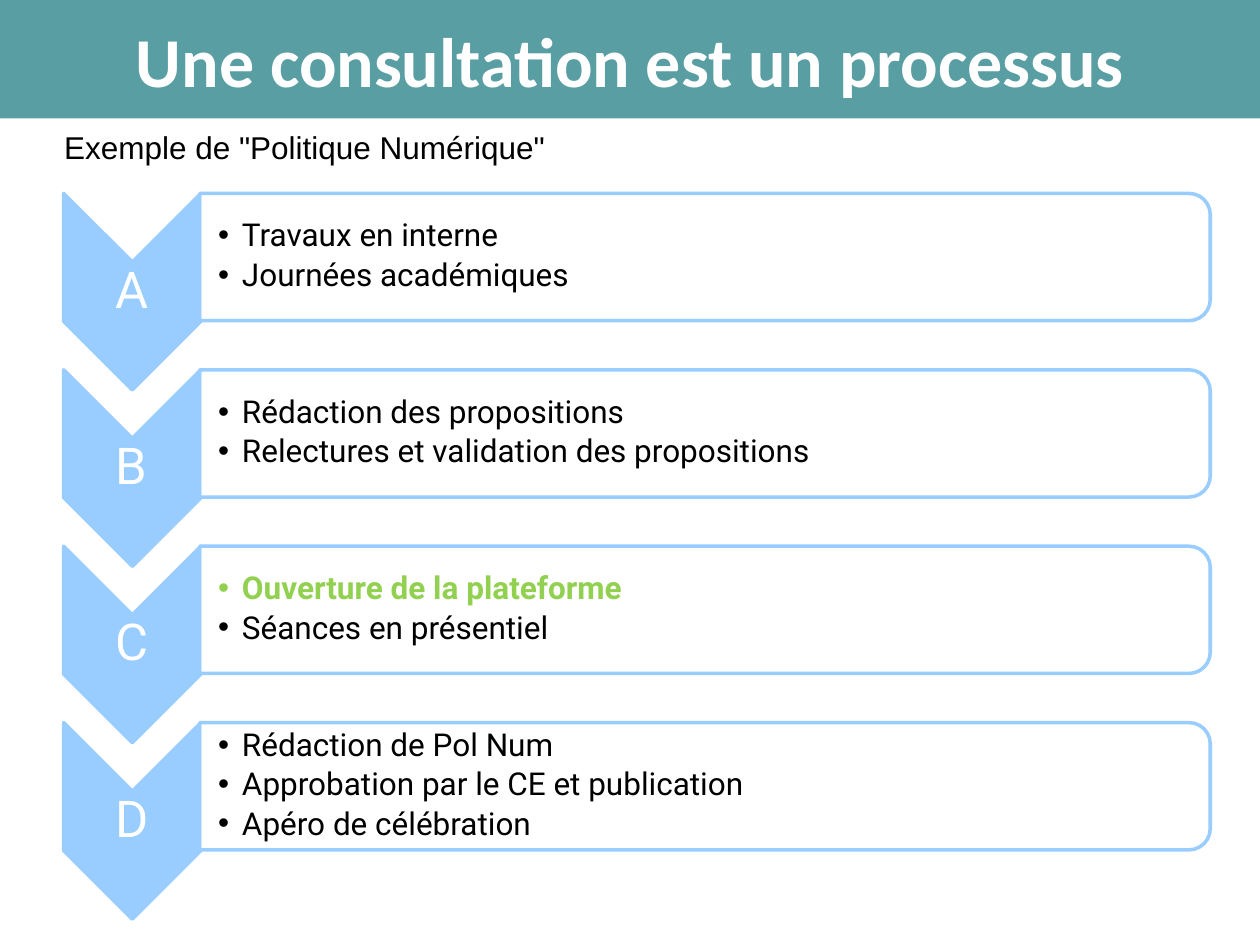
"""Build the slide showing the four stages of a consultation."""
from dataclasses import dataclass

from lxml import etree
from pptx import Presentation
from pptx.dml.color import RGBColor
from pptx.enum.shapes import MSO_SHAPE
from pptx.enum.text import MSO_ANCHOR, MSO_AUTO_SIZE, PP_ALIGN
from pptx.oxml.ns import qn
from pptx.util import Inches, Pt

CHEVRON = MSO_SHAPE.CHEVRON
CARD = MSO_SHAPE.ROUND_2_SAME_RECTANGLE
TOP, MIDDLE = MSO_ANCHOR.TOP, MSO_ANCHOR.MIDDLE
LEFT, CENTER = PP_ALIGN.LEFT, PP_ALIGN.CENTER
NO_AUTOFIT = MSO_AUTO_SIZE.NONE


@dataclass(frozen=True)
class Theme:
    banner: RGBColor = RGBColor.from_string("599EA3")
    stage: RGBColor = RGBColor.from_string("99CCFF")
    white: RGBColor = RGBColor.from_string("FFFFFF")
    black: RGBColor = RGBColor.from_string("000000")
    highlight: RGBColor = RGBColor.from_string("92D050")
    title_size: int = 40
    letter_size: int = 29
    body_size: int = 18
    title_font: str = "Calibri"
    stage_font: str = "Roboto"
    intro_font: str = "Arial"


THEME = Theme()
HIGHLIGHTED = "Ouverture de la plateforme"
STAGES = {
    "A": ["Travaux en interne", "Journées académiques"],
    "B": ["Rédaction des propositions", "Relectures et validation des propositions"],
    "C": [HIGHLIGHTED, "Séances en présentiel"],
    "D": ["Rédaction de Pol Num", "Approbation par le CE et publication", "Apéro de célébration"],
}
STAGE_STEP = 1.4


def write_text(shape, lines, *, font, size, color, bold=False, align=LEFT, anchor=MIDDLE,
               margins=(0.1, 0.05, 0.1, 0.05), line_spacing=1.0, space_after=0, bullets=False):
    frame = shape.text_frame
    frame.word_wrap = True
    frame.auto_size = NO_AUTOFIT
    frame.vertical_anchor = anchor
    frame.margin_left, frame.margin_top, frame.margin_right, frame.margin_bottom = map(Inches, margins)
    for index, line in enumerate(lines):
        paragraph = frame.paragraphs[0] if index == 0 else frame.add_paragraph()
        if bullets:
            properties = paragraph._p.get_or_add_pPr()
            properties.set("marL", str(Inches(0.19)))
            properties.set("indent", str(Inches(-0.19)))
            etree.SubElement(properties, qn("a:buFont"), typeface="Arial")
            etree.SubElement(properties, qn("a:buChar"), char="•")
        paragraph.alignment = align
        paragraph.line_spacing = line_spacing
        paragraph.space_before = Pt(0)
        paragraph.space_after = Pt(space_after)
        run = paragraph.add_run()
        run.text = line
        run.font.name = font
        run.font.size = Pt(size)
        run.font.bold = bold or line == HIGHLIGHTED
        run.font.color.rgb = THEME.highlight if line == HIGHLIGHTED else color


def add_turned_shape(slide, kind, left, top, width, height, fill):
    shape = slide.shapes.add_shape(kind, Inches(left), Inches(top), Inches(width), Inches(height))
    shape.rotation = 90
    shape.shadow.inherit = False
    shape.fill.solid()
    shape.fill.fore_color.rgb = fill
    shape.line.color.rgb = THEME.stage
    shape.line.width = Pt(2)
    return shape


presentation = Presentation()
presentation.slide_width, presentation.slide_height = Inches(10), Inches(7.5)
slide = presentation.slides.add_slide(presentation.slide_layouts.get_by_name("Comparison"))
title, *stage_lists = slide.placeholders

title.left, title.top, title.width, title.height = Inches(0), Inches(0), Inches(10), Inches(0.94)
title.fill.solid()
title.fill.fore_color.rgb = THEME.banner
write_text(title, ["Une consultation est un processus"], font=THEME.title_font,
           size=THEME.title_size, color=THEME.white, bold=True, align=CENTER)

intro = slide.shapes.add_textbox(Inches(0.41), Inches(0.97), Inches(7.31), Inches(0.42))
write_text(intro, ['Exemple de "Politique Numérique"'], font=THEME.intro_font,
           size=THEME.body_size, color=THEME.black, anchor=TOP)

for index, (stage_list, (letter, items)) in enumerate(zip(stage_lists, STAGES.items())):
    offset = index * STAGE_STEP
    add_turned_shape(slide, CHEVRON, 0.27, 1.77 + offset, 1.56, 1.09, THEME.stage)
    letter_box = slide.shapes.add_textbox(Inches(0.5), Inches(2.08 + offset), Inches(1.09), Inches(0.47))
    write_text(letter_box, [letter], font=THEME.stage_font, size=THEME.letter_size, color=THEME.white,
               align=CENTER, margins=(0.02,) * 4, line_spacing=0.9)

    card = add_turned_shape(slide, CARD, 5.09, -1.97 + offset, 1.01, 8.02, THEME.white)
    card_color = card.element.spPr.find(qn("a:solidFill"))[0]
    etree.SubElement(card_color, qn("a:alpha"), val="90000")

    stage_list.left, stage_list.top = Inches(1.59), Inches(1.58 + offset)
    stage_list.width, stage_list.height = Inches(7.97), Inches(0.91)
    write_text(stage_list, items, font=THEME.stage_font, size=THEME.body_size, color=THEME.black,
               margins=(0.14, 0.01, 0.01, 0.01), line_spacing=0.9, space_after=3, bullets=True)
    card.element.addnext(stage_list.element)

presentation.save("out.pptx")
